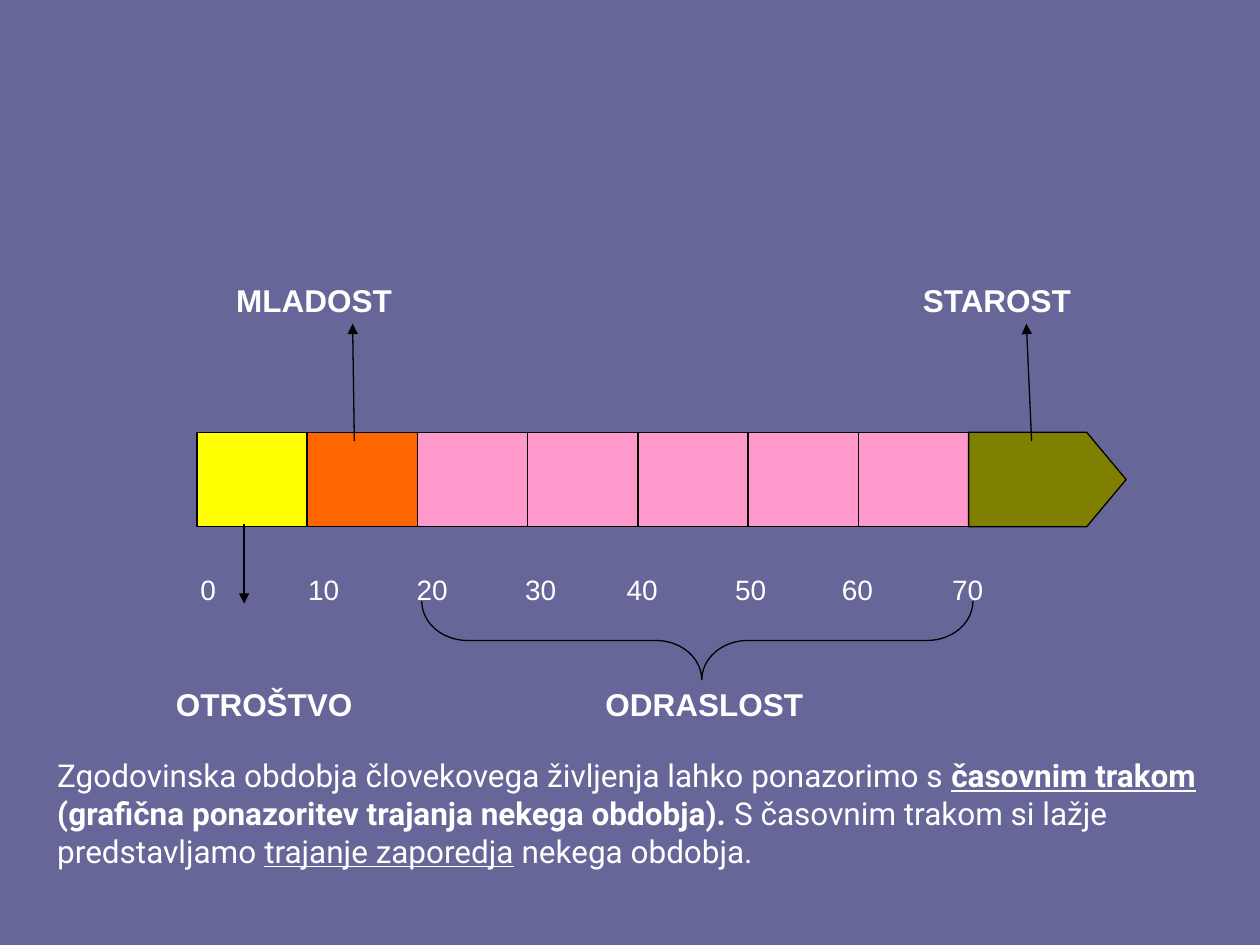
from lxml.etree import SubElement
from pptx import Presentation
from pptx.dml.color import RGBColor
from pptx.enum.shapes import MSO_CONNECTOR, MSO_SHAPE
from pptx.enum.text import MSO_ANCHOR, MSO_AUTO_SIZE, PP_ALIGN
from pptx.oxml.ns import qn
from pptx.util import Pt


def rgb(value):
    return RGBColor.from_string(value)


class Deck:
    LINE, TEXT, BACK = "000000", "FFFFFF", "666699"
    LABEL_FONT, BODY_FONT = "Arial", "Roboto"

    def __init__(self):
        self.prs = Presentation()
        self.prs.slide_width, self.prs.slide_height = Pt(720), Pt(540)

    def add_slide(self):
        self.s = self.prs.slides.add_slide(self.prs.slide_layouts[1])
        fill = self.s.background.fill
        fill.solid()
        fill.fore_color.rgb = rgb(self.BACK)
        title = self.s.shapes.title
        title.element.getparent().remove(title.element)

    def shape(self, kind, x, y, w, h, fill=None, adjust=()):
        sp = self.s.shapes.add_shape(kind, Pt(x), Pt(y), Pt(w), Pt(h))
        sp.shadow.inherit = False
        if fill:
            sp.fill.solid()
            sp.fill.fore_color.rgb = rgb(fill)
        else:
            sp.fill.background()
        sp.line.color.rgb = rgb(self.LINE)
        sp.line.width = Pt(0.75)
        for i, value in enumerate(adjust):
            sp.adjustments[i] = value
        return sp

    def arrow(self, x1, y1, x2, y2):
        c = self.s.shapes.add_connector(
            MSO_CONNECTOR.STRAIGHT, Pt(x1), Pt(y1), Pt(x2), Pt(y2))
        c.line.color.rgb = rgb(self.LINE)
        c.line.width = Pt(0.75)
        SubElement(c.line._get_or_add_ln(), qn("a:tailEnd"), type="triangle")
        SubElement(c.element.spPr, qn("a:effectLst"))

    def run(self, p, text, font, size, bold=False, underline=False):
        r = p.add_run()
        r.text = text
        r.font.name, r.font.size = font, Pt(size)
        r.font.bold, r.font.underline = bold, underline
        r.font.color.rgb = rgb(self.TEXT)

    def label(self, text, cx, cy, w=130, size=18, bold=True):
        h = 30
        sp = self.s.shapes.add_textbox(Pt(cx - w / 2), Pt(cy - h / 2), Pt(w), Pt(h))
        tf = sp.text_frame
        tf.word_wrap = True
        tf.vertical_anchor = MSO_ANCHOR.MIDDLE
        p = tf.paragraphs[0]
        p.alignment = PP_ALIGN.CENTER
        self.run(p, text, self.LABEL_FONT, size, bold)

    def body(self, x, y, w, h, runs):
        sp = self.s.placeholders[1]
        sp.left, sp.top, sp.width, sp.height = Pt(x), Pt(y), Pt(w), Pt(h)
        tf = sp.text_frame
        tf.word_wrap = True
        tf.auto_size = MSO_AUTO_SIZE.NONE
        p = tf.paragraphs[0]
        p.space_before = Pt(0)
        pPr = p._p.get_or_add_pPr()
        pPr.set("marL", "0")
        pPr.set("indent", "0")
        SubElement(pPr, qn("a:buNone"))
        for text, bold, underline in runs:
            self.run(p, text, self.BODY_FONT, 18, bold, underline)


def main():
    deck = Deck()
    deck.add_slide()

    # Timeline: one box per decade, ending in an arrow for old age
    left, top, step, height = 112.5, 247, 63, 54
    decades = ["FFFF00", "FF6600"] + ["FF99CC"] * 5
    for i, color in enumerate(decades):
        deck.shape(MSO_SHAPE.RECTANGLE, left + i * step, top, step, height, color)
    deck.shape(MSO_SHAPE.PENTAGON, left + len(decades) * step, top, 90, height,
               "808000", [0.417])

    # Years under the timeline
    for i, cx in enumerate([119, 185, 247, 309, 367, 429, 490, 553]):
        deck.label(str(i * 10), cx, 337, w=50, size=16, bold=False)

    # Pointers and the brace for adulthood
    deck.arrow(139.5, 299.5, 139.5, 345)
    deck.arrow(202.5, 252, 201.5, 185)
    deck.arrow(589.5, 252, 586.5, 185)
    brace = deck.shape(MSO_SHAPE.RIGHT_BRACE, 376, 208.5, 45, 315,
                       adjust=[0.583, 0.492])
    brace.rotation = 90

    # Periods of life
    for text, cx, cy in [("MLADOST", 179.5, 171.5), ("STAROST", 569.7, 171.5),
                         ("OTROŠTVO", 151, 402), ("ODRASLOST", 402.5, 402)]:
        deck.label(text, cx, cy)

    # Explanation: text, bold, underline
    deck.body(25.5, 428.5, 674.5, 72, [
        ("Zgodovinska obdobja človekovega življenja lahko ponazorimo s ", False, False),
        ("časovnim trakom", True, True),
        (" (grafična ponazoritev trajanja nekega obdobja).", True, False),
        (" S časovnim trakom si lažje predstavljamo ", False, False),
        ("trajanje zaporedja", False, True),
        (" nekega obdobja.", False, False),
    ])

    deck.prs.save("out.pptx")


if __name__ == "__main__":
    main()
